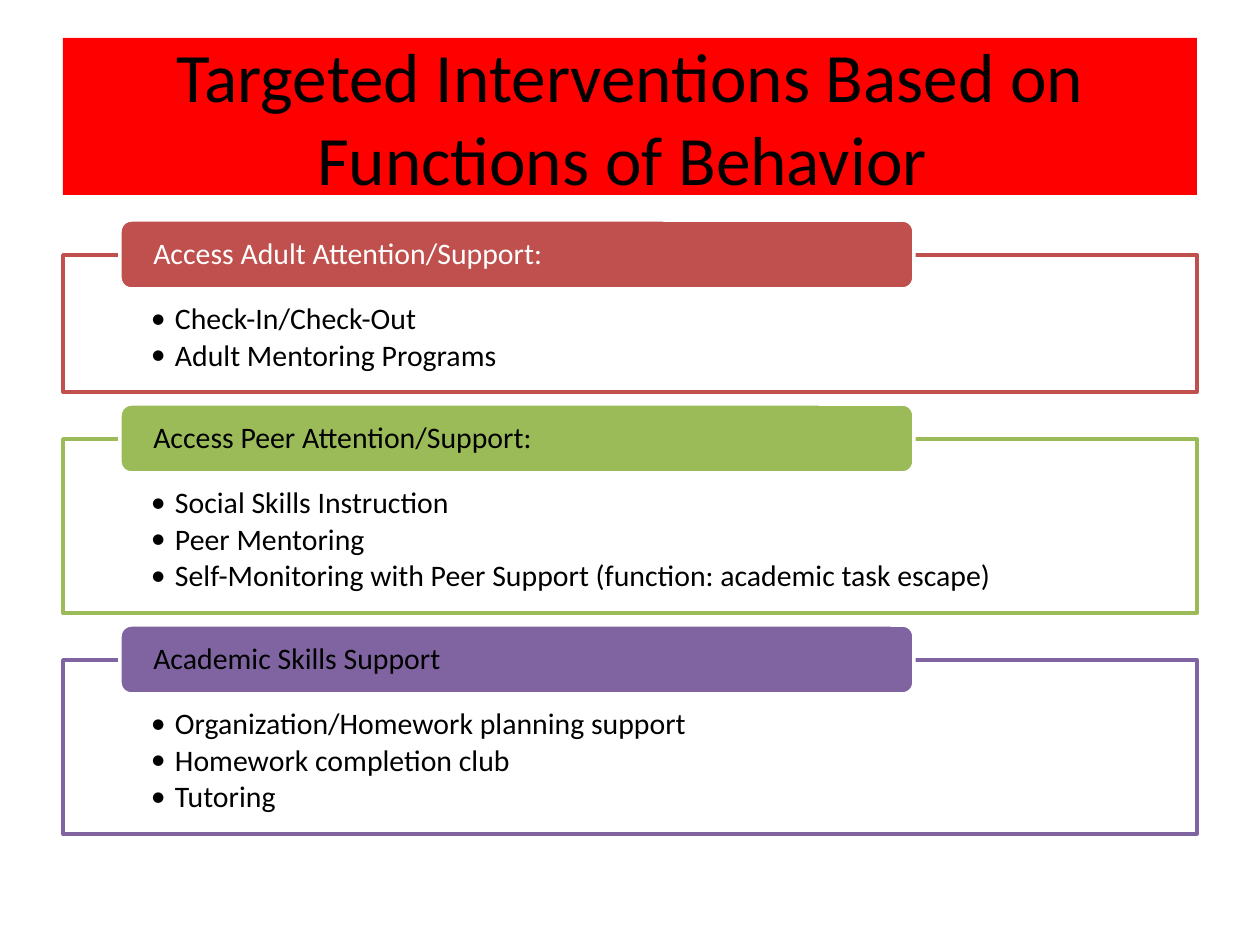
import lxml.etree
import pptx
import pptx.dml.color
import pptx.enum.shapes
import pptx.enum.text
import pptx.oxml.ns
import pptx.util

EMU_PER_PX = 914400 / 126
COLORS = {
    "title": "FF0000",
    "adult": "C0504D",
    "peer": "9BBB59",
    "academic": "8064A2",
    "white": "FFFFFF",
    "black": "000000",
}
SECTIONS = [
    ("adult", "white", 137, "Access Adult Attention/Support:",
     ["Check-In/Check-Out", "Adult Mentoring Programs"]),
    ("peer", "black", 174, "Access Peer Attention/Support:",
     ["Social Skills Instruction", "Peer Mentoring",
      "Self-Monitoring with Peer Support (function: academic task escape)"]),
    ("academic", "black", 174, "Academic Skills Support",
     ["Organization/Homework planning support", "Homework completion club", "Tutoring"]),
]
SHAPES = pptx.enum.shapes.MSO_SHAPE
ANCHORS = pptx.enum.text.MSO_ANCHOR
ALIGNMENTS = pptx.enum.text.PP_ALIGN


def px(length):
    return pptx.util.Emu(round(length * EMU_PER_PX))


def add_text_shape(kind, box, fill, line, lines, size, color, anchor, margins):
    """Add a filled shape with one paragraph per line; margins are left, top, right, bottom."""
    shape = slide.shapes.add_shape(kind, *[px(length) for length in box])
    shape.shadow.inherit = False
    shape.fill.solid()
    shape.fill.fore_color.rgb = pptx.dml.color.RGBColor.from_string(COLORS[fill])
    if line:
        shape.line.color.rgb = pptx.dml.color.RGBColor.from_string(COLORS[line])
        shape.line.width = pptx.util.Pt(2)
    else:
        shape.line.fill.background()
    text_frame = shape.text_frame
    text_frame.word_wrap = True
    text_frame.vertical_anchor = anchor
    (text_frame.margin_left, text_frame.margin_top,
     text_frame.margin_right, text_frame.margin_bottom) = [px(margin) for margin in margins]
    text_frame.text = "\n".join(lines)
    for paragraph in text_frame.paragraphs:
        paragraph.alignment = ALIGNMENTS.LEFT
        for run in paragraph.runs:
            run.font.name = "Calibri"
            run.font.size = pptx.util.Pt(size)
            run.font.color.rgb = pptx.dml.color.RGBColor.from_string(COLORS[color])
    return shape


presentation = pptx.Presentation()
presentation.slide_width = px(1260)
presentation.slide_height = px(945)
slide = presentation.slides.add_slide(presentation.slide_layouts[6])

title = add_text_shape(
    SHAPES.RECTANGLE, (63, 38, 1134, 157), "title", None,
    ["Targeted Interventions Based on Functions of Behavior "],
    39.6, "black", ANCHORS.MIDDLE, (13, 0, 13, 0))
title.text_frame.paragraphs[0].alignment = ALIGNMENTS.CENTER

panel_top = 255
for accent, heading_color, panel_height, heading, items in SECTIONS:
    panel = add_text_shape(
        SHAPES.RECTANGLE, (63, panel_top, 1134, panel_height), "white", accent,
        items, 17, "black", ANCHORS.TOP, (88, 49, 88, 16))
    for paragraph in panel.text_frame.paragraphs:
        properties = paragraph._p.get_or_add_pPr()
        properties.set("marL", str(px(24)))
        properties.set("indent", str(-px(24)))
        bullet_font = lxml.etree.SubElement(properties, pptx.oxml.ns.qn("a:buFont"))
        bullet_font.set("typeface", "Calibri")
        bullet = lxml.etree.SubElement(properties, pptx.oxml.ns.qn("a:buChar"))
        bullet.set("char", "•")
        paragraph.line_spacing = 0.9
        paragraph.space_after = pptx.util.Pt(2.5)

    tab = add_text_shape(
        SHAPES.ROUNDED_RECTANGLE, (120, panel_top - 35, 794, 69), accent, "white",
        [heading], 17, heading_color, ANCHORS.MIDDLE, (30, 0, 30, 0))
    tab.text_frame.paragraphs[0].line_spacing = 0.9
    panel_top += panel_height + 47

presentation.save("out.pptx")
